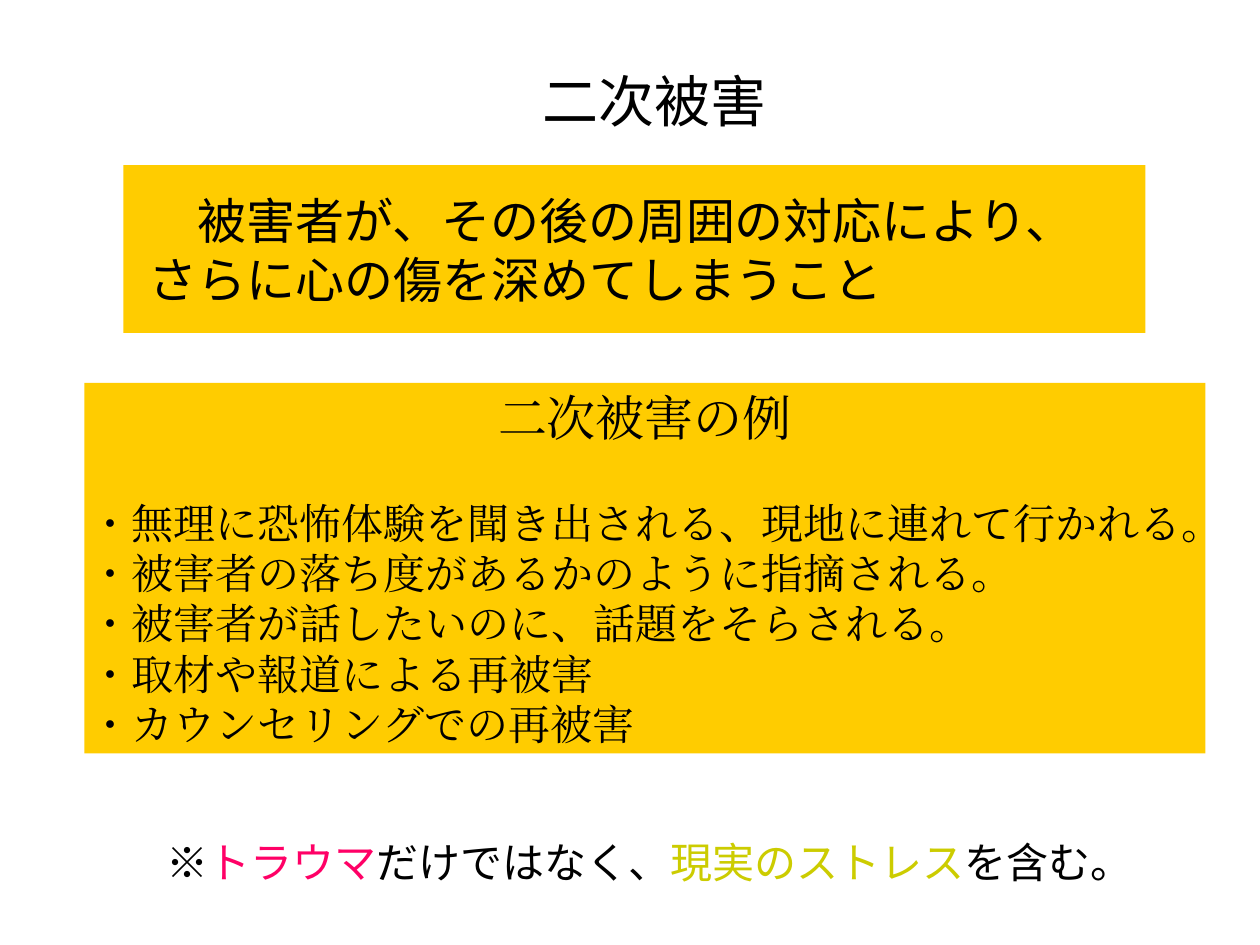
from dataclasses import dataclass

from pptx import Presentation
from pptx.dml.color import RGBColor as RGB
from pptx.enum.shapes import MSO_SHAPE as Preset
from pptx.enum.text import MSO_ANCHOR as Anchor, MSO_AUTO_SIZE as AutoSize, PP_ALIGN as Align
from pptx.oxml.ns import qn
from pptx.util import Cm, Pt


@dataclass(frozen=True)
class Theme:
    panel: RGB = RGB(0xFF, 0xCC, 0x00)
    ink: RGB = RGB(0, 0, 0)
    pink: RGB = RGB(0xFF, 0x00, 0x66)
    olive: RGB = RGB(0xCC, 0xCC, 0x00)
    title_size: int = 32
    heading_size: int = 28
    body_size: int = 24
    sans: str = "Arial"
    serif: str = "Times New Roman"
    japanese: str = "Noto Sans CJK JP"


THEME = Theme()

EXAMPLES = [
    "・無理に恐怖体験を聞き出される、現地に連れて行かれる。",
    "・被害者の落ち度があるかのように指摘される。",
    "・被害者が話したいのに、話題をそらされる。",
    "・取材や報道による再被害",
    "・カウンセリングでの再被害",
]


def style_run(run, size, font, color=THEME.ink):
    """Format a run, with the same face for Latin and Japanese text."""
    run.font.size = Pt(size)
    run.font.name = font
    run.font.color.rgb = color
    east_asian = run._r.get_or_add_rPr().makeelement(qn("a:ea"), {"typeface": font})
    run.font._element.find(qn("a:latin")).addnext(east_asian)


def write(paragraph, text, size, font, align=Align.LEFT):
    paragraph.text = text
    paragraph.alignment = align
    style_run(paragraph.runs[0], size, font)


def add_label(slide, left, top, width, height):
    frame = slide.shapes.add_textbox(Cm(left), Cm(top), Cm(width), Cm(height)).text_frame
    frame.word_wrap = True
    return frame


def add_panel(slide, left, top, width, height, inset):
    """Add a yellow panel and return its text frame."""
    panel = slide.shapes.add_shape(
        Preset.RECTANGLE, Cm(left), Cm(top), Cm(width), Cm(height))
    panel.shadow.inherit = False
    panel.fill.solid()
    panel.fill.fore_color.rgb = THEME.panel
    panel.line.fill.background()
    frame = panel.text_frame
    frame.word_wrap = True
    frame.auto_size = AutoSize.SHAPE_TO_FIT_TEXT
    frame.vertical_anchor = Anchor.TOP
    frame.margin_left = frame.margin_right = Cm(inset)
    frame.margin_top = frame.margin_bottom = Cm(inset)
    return frame


def add_examples(slide):
    frame = add_panel(slide, 1.7, 7.72, 22.6, 7.47, 0.1)
    write(frame.paragraphs[0], "二次被害の例", THEME.heading_size, THEME.serif, Align.CENTER)
    for example in EXAMPLES:
        write(frame.add_paragraph(), example, THEME.body_size, THEME.serif)
    # One line of air between heading and list
    frame.paragraphs[1].space_before = Pt(28.8)


def add_note(slide):
    frame = add_label(slide, 3.1, 16.74, 19.2, 1.27)
    frame.auto_size = AutoSize.SHAPE_TO_FIT_TEXT
    pieces = [
        ("※", THEME.ink),
        ("トラウマ", THEME.pink),
        ("だけではなく、", THEME.ink),
        ("現実のストレス", THEME.olive),
        ("を含む。", THEME.ink),
    ]
    for text, color in pieces:
        run = frame.paragraphs[0].add_run()
        run.text = text
        style_run(run, THEME.body_size, THEME.sans, color)


def main():
    deck = Presentation()
    deck.slide_width, deck.slide_height = Cm(25.4), Cm(19.05)
    slide = deck.slides.add_slide(deck.slide_layouts[6])

    # Title
    title = add_label(slide, 8.3, 1.32, 9.8, 1.4)
    title.vertical_anchor = Anchor.MIDDLE
    write(title.paragraphs[0], "二次被害", THEME.title_size, THEME.sans, Align.CENTER)

    # Examples
    add_examples(slide)

    # Definition
    definition = add_panel(slide, 2.49, 3.33, 20.6, 3.38, 0.51)
    write(definition.paragraphs[0],
          "　被害者が、その後の周囲の対応により、さらに心の傷を深めてしまうこと",
          THEME.heading_size, THEME.japanese)

    # Closing note
    add_note(slide)

    deck.save("out.pptx")


if __name__ == "__main__":
    main()
